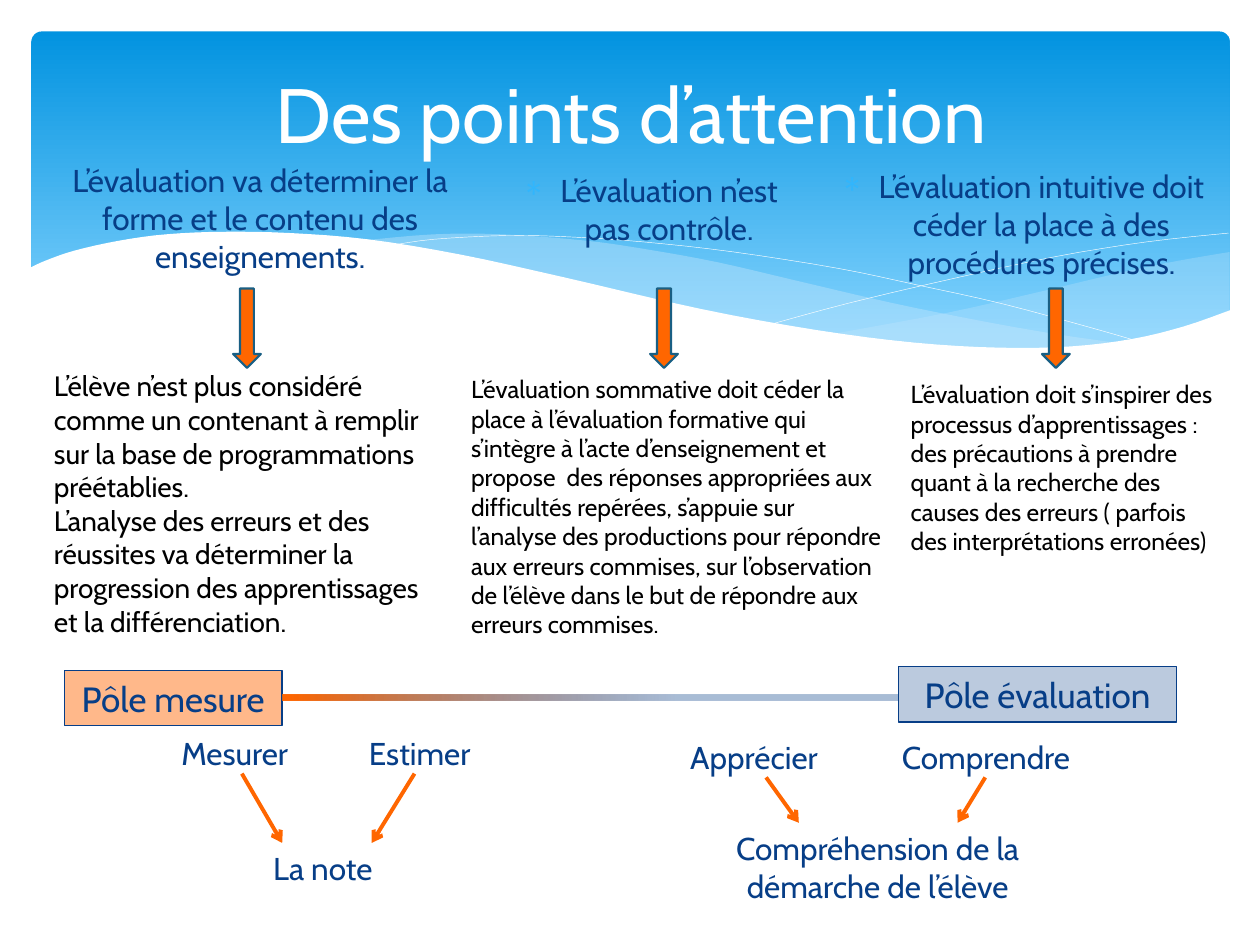
from dataclasses import dataclass
from itertools import chain

from lxml.etree import SubElement
from pptx import Presentation
from pptx.dml.color import RGBColor
from pptx.enum.shapes import MSO_CONNECTOR, MSO_SHAPE
from pptx.enum.text import MSO_ANCHOR, MSO_AUTO_SIZE, PP_ALIGN
from pptx.oxml.ns import qn
from pptx.util import Pt

PX = 9144  # 100 px to the inch
FONT = "Cabin"
COLORS = {
    "white": "FFFFFF", "black": "000000", "navy": "073E87", "orange": "FF6600",
    "sky_top": "0293E0", "sky_bottom": "83D3FE", "mist": "C6E7FC",
    "bullet": "31B6FD", "arrow_edge": "195F84",
}
Point = tuple[int, int]
Box = tuple[int, int, int, int]


@dataclass
class Note:
    text: str
    box: Box
    size: int = 18
    color: str = "navy"
    centred: bool = False
    bulleted: bool = False


@dataclass
class Wave:
    """Area between curves when filled, otherwise a thin white line."""
    curves: list[list[Point]]
    fill: str | None = None
    opacity: int = 100


@dataclass
class Pole:
    text: str
    box: Box
    color: str
    opacity: int


WAVES = [
    Wave([[(976, 200), (935, 207), (891, 216), (832, 230), (753, 248), (661, 265)],
          [(661, 265), (719, 271), (769, 277), (814, 278), (863, 275), (913, 267),
           (949, 257), (976, 247)]], "mist", 29),
    Wave([[(893, 273), (837, 265), (775, 254), (706, 240), (629, 222), (569, 208),
           (514, 198), (465, 191), (399, 186), (344, 186), (286, 191)],
          [(286, 191), (362, 203), (449, 222), (530, 240), (601, 255), (665, 266),
           (722, 274), (785, 278), (838, 278), (893, 273)]], "mist", 40),
    Wave([[(309, 195), (344, 190), (401, 187), (450, 188), (510, 192), (582, 200),
           (665, 213), (727, 226), (795, 241), (869, 261), (907, 272)]]),
    Wave([[(613, 257), (672, 241), (748, 223), (836, 204), (910, 192), (975, 185)]]),
    Wave([[(977, 246), (940, 259), (899, 269), (850, 275), (793, 276), (726, 272),
           (648, 262), (555, 245), (447, 220), (365, 202), (292, 190), (230, 185),
           (177, 184), (132, 186), (95, 191), (59, 199), (36, 207), (23, 213)],
          [(23, 213), (23, 329)], [(23, 329), (977, 329)]], "white"),
]
TITLE = Note("Des points d’attention", (51, 21, 900, 137), 44, "white", True)
FIRST_IDEA = Note("L’évaluation va déterminer la forme et le contenu des enseignements.",
                  (47, 123, 319, 107), centred=True)
NOTES = [
    Note("L’évaluation n’est pas contrôle.", (387, 131, 258, 79),
         centred=True, bulleted=True),
    Note("L’évaluation intuitive doit céder la place à des procédures précises.",
         (634, 128, 355, 109), centred=True, bulleted=True),
    Note("L’élève n’est plus considéré comme un contenant à remplir sur la base de "
         "programmations préétablies.\nL’analyse des erreurs et des réussites va "
         "déterminer la progression des apprentissages et la différenciation.",
         (33, 288, 331, 226), 16, "black"),
    Note("L’évaluation sommative doit céder la place à l’évaluation formative qui "
         "s’intègre à l’acte d’enseignement et propose  des réponses appropriées aux "
         "difficultés repérées, s’appuie sur l’analyse des productions pour répondre "
         "aux erreurs commises, sur l’observation de l’élève dans le but de répondre "
         "aux erreurs commises.", (364, 292, 346, 222), 14, "black"),
    Note("L’évaluation doit s’inspirer des processus d’apprentissages : des précautions "
         "à prendre quant à la recherche des causes des erreurs ( parfois des "
         "interprétations erronées)", (713, 296, 260, 175), 14, "black"),
    Note("Mesurer", (134, 578, 122, 40)),
    Note("Estimer", (283, 578, 122, 40)),
    Note("Apprécier", (538, 581, 140, 40)),
    Note("Comprendre", (706, 581, 157, 40)),
    Note("La note", (207, 669, 122, 40)),
    Note("Compréhension de la démarche de l’élève", (552, 653, 289, 71), centred=True),
]
DOWN_ARROW_LEFTS = [185, 516, 827]
POLES = [Pole("Pôle mesure", (51, 532, 173, 44), "orange", 46),
         Pole("Pôle évaluation", (713, 529, 221, 44), "navy", 27)]
LINKS = [((192, 614), (224, 669)), ((608, 617), (634, 653)),
         ((329, 614), (295, 669)), ((782, 617), (760, 653))]


def rgb(name: str) -> RGBColor:
    return RGBColor.from_string(COLORS[name])


def emu(lengths: tuple[int, ...]) -> list[int]:
    return [length * PX for length in lengths]


def set_opacity(shape, percent: int) -> None:
    """Applies to the last colour set; call before colouring the outline."""
    color = list(shape.element.spPr.iter(qn("a:srgbClr")))[-1]
    SubElement(color, qn("a:alpha"), val=str(percent * 1000))


def paint(shape, fill: str, opacity: int = 100) -> None:
    shape.fill.solid()
    shape.fill.fore_color.rgb = rgb(fill)
    if opacity < 100:
        set_opacity(shape, opacity)


def outline(shape, color: str, width: float) -> None:
    shape.line.color.rgb = rgb(color)
    shape.line.width = Pt(width)


def add_preset(shapes, preset, box: Box):
    shape = shapes.add_shape(preset, *emu(box))
    shape.shadow.inherit = False
    shape.line.fill.background()
    return shape


def add_gradient(shapes, preset, box: Box, stops: list[tuple[str, float]], angle: int):
    band = add_preset(shapes, preset, box)
    band.fill.gradient()
    band.fill.gradient_angle = angle
    for stop, (color, position) in zip(band.fill.gradient_stops, stops):
        stop.color.rgb = rgb(color)
        stop.position = position
    return band


def smooth(points: list[Point], steps: int = 4) -> list[tuple[float, float]]:
    """Catmull-Rom curve through the points."""
    if len(points) < 3:
        return points
    padded = [points[0], *points, points[-1]]
    curve = [points[0]]
    for quad in zip(padded, padded[1:], padded[2:], padded[3:]):
        for t in (step / steps for step in range(1, steps + 1)):
            curve.append(tuple(
                (2 * b + (c - a) * t + (2 * a - 5 * b + 4 * c - d) * t ** 2
                 + (3 * b - a - 3 * c + d) * t ** 3) / 2
                for a, b, c, d in zip(*quad)))
    return curve


def add_wave(shapes, wave: Wave) -> None:
    trace = [(x * PX, y * PX) for x, y in chain.from_iterable(map(smooth, wave.curves))]
    builder = shapes.build_freeform(*map(round, trace[0]))
    builder.add_line_segments(trace[1:], close=wave.fill is not None)
    ribbon = builder.convert_to_shape()
    ribbon.shadow.inherit = False
    if wave.fill:
        paint(ribbon, wave.fill, wave.opacity)
        ribbon.line.fill.background()
    else:
        ribbon.fill.background()
        outline(ribbon, "white", 0.25)


def write(shape, note: Note) -> None:
    frame = shape.text_frame
    frame.word_wrap = True
    frame.auto_size = MSO_AUTO_SIZE.NONE
    frame.text = note.text
    for paragraph in frame.paragraphs:
        paragraph.alignment = PP_ALIGN.CENTER if note.centred else PP_ALIGN.LEFT
        for run in paragraph.runs:
            run.font.name = FONT
            run.font.size = Pt(note.size)
            run.font.color.rgb = rgb(note.color)


def set_bullet(paragraph, bulleted: bool) -> None:
    paragraph.space_before = Pt(3.6)
    props = paragraph._p.get_or_add_pPr()
    indent = 30 * PX if bulleted else 0
    props.set("marL", str(indent))
    props.set("indent", str(-indent))
    if bulleted:
        SubElement(SubElement(props, qn("a:buClr")), qn("a:srgbClr"), val=COLORS["bullet"])
        SubElement(props, qn("a:buChar"), char="∗")
    else:
        SubElement(props, qn("a:buNone"))


def fill_placeholder(placeholder, note: Note) -> None:
    """Moves the placeholder in front of the backdrop and writes the note in it."""
    placeholder.element.getparent().append(placeholder.element)
    placeholder.left, placeholder.top, placeholder.width, placeholder.height = emu(note.box)
    write(placeholder, note)


def add_note(shapes, note: Note) -> None:
    box = shapes.add_textbox(*emu(note.box))
    write(box, note)
    if note.bulleted:
        set_bullet(box.text_frame.paragraphs[0], True)


def add_pole(shapes, pole: Pole) -> None:
    label = add_preset(shapes, MSO_SHAPE.RECTANGLE, pole.box)
    paint(label, pole.color, pole.opacity)
    outline(label, "navy", 0.75)
    write(label, Note(pole.text, pole.box, 20, centred=True))


def add_link(shapes, start: Point, end: Point) -> None:
    link = shapes.add_connector(MSO_CONNECTOR.STRAIGHT, *emu(start + end))
    outline(link, "orange", 2.25)
    props = link.element.spPr
    SubElement(props.find(qn("a:ln")), qn("a:tailEnd"), type="arrow")
    SubElement(props, qn("a:effectLst"))


def main() -> None:
    deck = Presentation()
    deck.slide_width, deck.slide_height = emu((1000, 750))
    slide = deck.slides.add_slide(deck.slide_layouts[1])
    shapes = slide.shapes
    title, body = shapes.title, slide.placeholders[1]

    sky = add_gradient(shapes, MSO_SHAPE.ROUNDED_RECTANGLE, (25, 25, 951, 270),
                       [("sky_top", 0), ("sky_bottom", 0.9)], 270)
    sky.adjustments[0] = 0.03
    for wave in WAVES:
        add_wave(shapes, wave)

    fill_placeholder(body, FIRST_IDEA)
    set_bullet(body.text_frame.paragraphs[0], False)
    fill_placeholder(title, TITLE)
    title.text_frame.vertical_anchor = MSO_ANCHOR.MIDDLE
    for note in NOTES:
        add_note(shapes, note)
    for left in DOWN_ARROW_LEFTS:
        arrow = add_preset(shapes, MSO_SHAPE.DOWN_ARROW, (left, 229, 22, 63))
        paint(arrow, "orange")
        outline(arrow, "arrow_edge", 1.25)

    for pole in POLES:
        add_pole(shapes, pole)
    scale = add_gradient(shapes, MSO_SHAPE.RECTANGLE, (224, 551, 489, 5),
                         [("orange", 0.01), ("navy", 0.64)], 0)
    set_opacity(scale, 34)
    for start, end in LINKS:
        add_link(shapes, start, end)
    deck.save("out.pptx")


if __name__ == "__main__":
    main()
